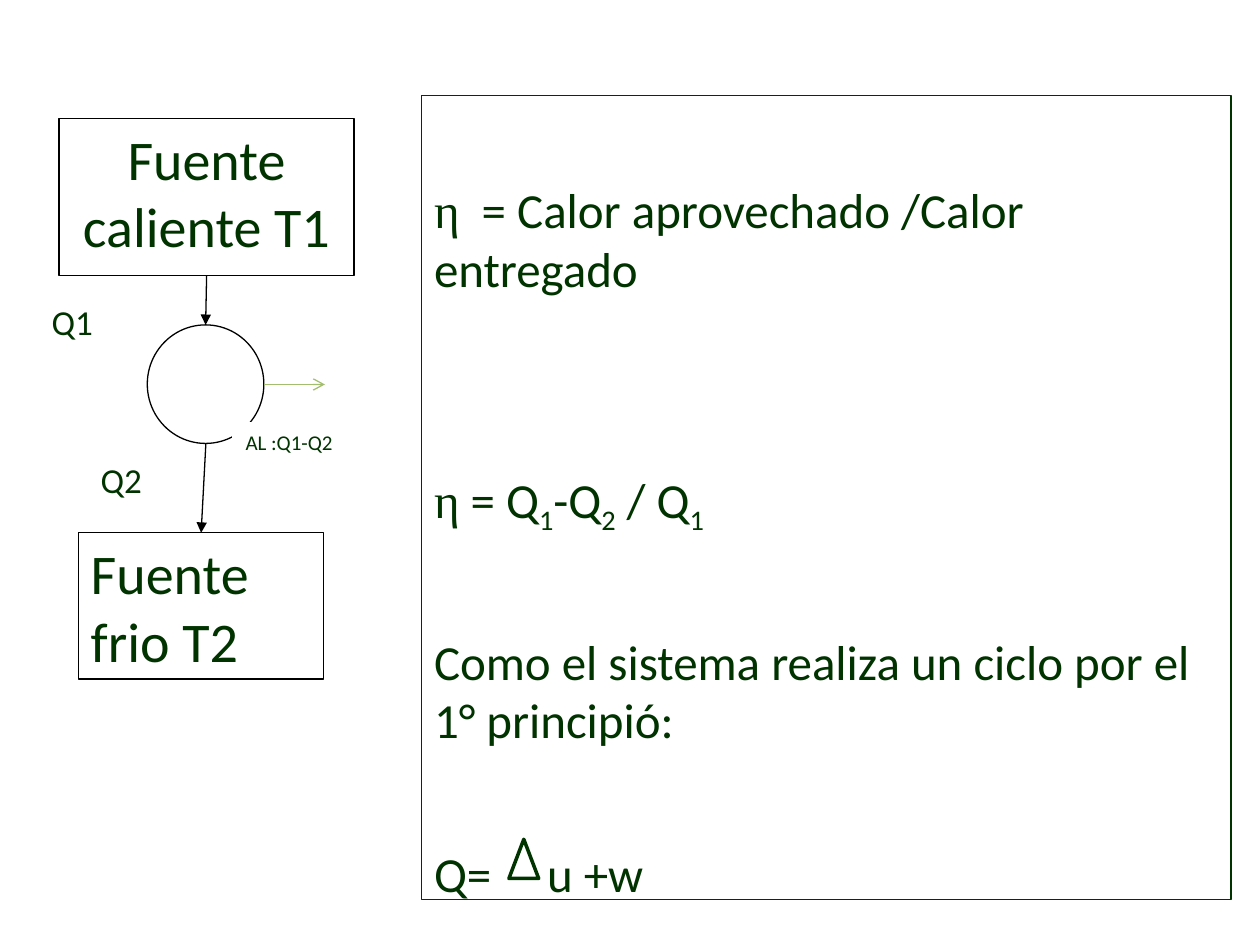
from dataclasses import dataclass
from typing import Optional

from lxml.etree import SubElement
from pptx import Presentation
from pptx.dml.color import RGBColor
from pptx.enum.dml import MSO_LINE_DASH_STYLE as Dash
from pptx.enum.shapes import MSO_CONNECTOR as Conn, MSO_SHAPE as Geo
from pptx.enum.text import MSO_ANCHOR as Anchor, PP_ALIGN as Align
from pptx.oxml.ns import qn
from pptx.util import Cm, Pt

WHITE = RGBColor(0xFF, 0xFF, 0xFF)
BLACK = RGBColor(0, 0, 0)
GREEN = RGBColor(0x00, 0x33, 0x00)
OLIVE = RGBColor(0xA3, 0xBD, 0x6F)
SANS, SERIF = "Calibri", "Times New Roman"
BODY = 28
ROW = 44.2  # one body line with its space after, in points


@dataclass
class Box:
    x: float
    y: float
    w: float
    h: float
    line: RGBColor = BLACK
    text: str = ""
    size: int = 32
    geo: Geo = Geo.RECTANGLE
    align: Align = Align.LEFT
    weight: float = 0.75
    dash: Optional[Dash] = None


@dataclass
class Bit:
    text: str
    font: str = SANS
    sub: bool = False


@dataclass
class Row:
    bits: list[Bit]
    skip: int = 0  # empty rows above
    tab: float = 0


def add_run(para, bit: Bit, size: int) -> None:
    run = para.add_run()
    run.text = bit.text
    run.font.name = bit.font
    run.font.size = Pt(size)
    run.font.color.rgb = GREEN
    if bit.sub:
        run._r.get_or_add_rPr().set("baseline", "-25000")


def draw_box(slide, box: Box):
    shape = slide.shapes.add_shape(box.geo, Cm(box.x), Cm(box.y), Cm(box.w), Cm(box.h))
    shape.shadow.inherit = False
    shape.fill.solid()
    shape.fill.fore_color.rgb = WHITE
    shape.line.color.rgb = box.line
    shape.line.width = Pt(box.weight)
    if box.dash:
        shape.line.dash_style = box.dash
    frame = shape.text_frame
    frame.word_wrap = True
    frame.vertical_anchor = Anchor.TOP
    if box.text:
        para = frame.paragraphs[0]
        para.alignment = box.align
        para.space_after = Pt(10)
        add_run(para, Bit(box.text), box.size)
    return shape


def draw_rows(frame, rows: list[Row]) -> None:
    for i, row in enumerate(rows):
        para = frame.add_paragraph() if i else frame.paragraphs[0]
        para.alignment = Align.LEFT
        para.space_after = Pt(10)
        if row.skip:
            para.space_before = Pt(row.skip * ROW)
        if row.tab:
            tabs = SubElement(para._p.get_or_add_pPr(), qn("a:tabLst"))
            SubElement(tabs, qn("a:tab"), pos=str(Cm(row.tab)), algn="l")
        for bit in row.bits:
            add_run(para, bit, BODY)


def draw_arrow(slide, start: tuple, end: tuple, color: RGBColor, head: str):
    link = slide.shapes.add_connector(Conn.STRAIGHT, *map(Cm, start + end))
    link.line.color.rgb = color
    link.line.width = Pt(0.75)
    SubElement(link.line._get_or_add_ln(), qn("a:tailEnd"), type=head)
    SubElement(link._element.spPr, qn("a:effectLst"))
    return link


def main() -> None:
    deck = Presentation()
    deck.slide_width, deck.slide_height = Cm(25.4), Cm(19.05)
    slide = deck.slides.add_slide(deck.slide_layouts[6])

    # Heat engine: sources, working body and labels
    hot = draw_box(slide, Box(1.19, 2.39, 5.95, 3.17, text="Fuente caliente T1",
                              align=Align.CENTER))
    body = draw_box(slide, Box(2.97, 6.55, 2.35, 2.39, geo=Geo.OVAL))
    cold = draw_box(slide, Box(1.58, 10.74, 4.95, 2.95, text="Fuente frio T2"))
    for label in (
        Box(4.7, 8.53, 3.23, 1.78, WHITE, "AL :Q1-Q2", 12),
        Box(0.79, 5.94, 1.6, 1.19, WHITE, "Q1", 20, weight=1, dash=Dash.DASH),
        Box(1.78, 9.12, 1.4, 1.19, WHITE, "Q2", 20),
    ):
        draw_box(slide, label)

    # Heat and work flows
    heat = draw_arrow(slide, (4.16, 5.56), (4.16, 6.55), BLACK, "triangle")
    heat.begin_connect(hot, 2)
    heat.end_connect(body, 0)
    waste = draw_arrow(slide, (4.15, 8.94), (4.06, 10.74), BLACK, "triangle")
    waste.end_connect(cold, 0)
    draw_arrow(slide, (5.32, 7.75), (6.55, 7.75), OLIVE, "arrow")

    # Efficiency formulas
    panel = draw_box(slide, Box(8.5, 1.93, 16.32, 16.2, GREEN))
    panel.text_frame.margin_top = Cm(0.13) + Pt(ROW)
    draw_rows(panel.text_frame, [
        Row([Bit("η", SERIF), Bit("  = Calor aprovechado /Calor entregado")]),
        Row([Bit("η", SERIF), Bit(" = Q"), Bit("1", sub=True), Bit("-Q"),
             Bit("2", sub=True), Bit(" / Q"), Bit("1", sub=True)], skip=2),
        Row([Bit("Como el sistema realiza un ciclo por el 1° principió:")], skip=1),
        Row([Bit("Q=\tu +w")], skip=1, tab=2.28),
    ])

    # Delta sign in the last formula
    draw_box(slide, Box(10.26, 16.92, 0.6, 0.79, GREEN, geo=Geo.ISOSCELES_TRIANGLE, weight=2))

    deck.save("out.pptx")


if __name__ == "__main__":
    main()
